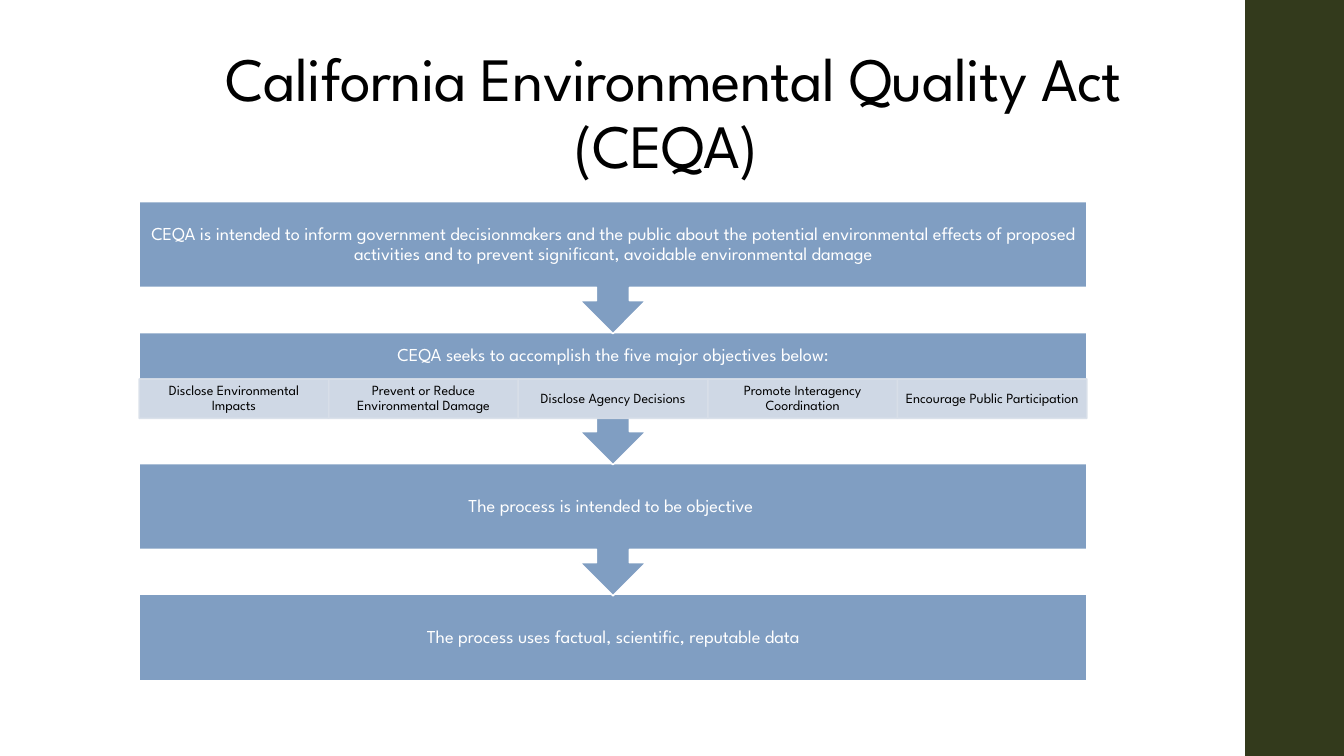
from dataclasses import dataclass

from lxml.etree import SubElement
from pptx import Presentation
from pptx.dml.color import RGBColor
from pptx.enum.shapes import MSO_SHAPE as Shape
from pptx.enum.text import MSO_ANCHOR as Anchor, PP_ALIGN as Align
from pptx.oxml.ns import qn
from pptx.util import Inches, Pt


@dataclass(frozen=True)
class Theme:
    font: str = "League Spartan"
    black: RGBColor = RGBColor(0x00, 0x00, 0x00)
    white: RGBColor = RGBColor(0xFF, 0xFF, 0xFF)
    olive: RGBColor = RGBColor(0x33, 0x3A, 0x1C)
    blue: RGBColor = RGBColor(0x80, 0x9E, 0xC2)
    pale: RGBColor = RGBColor(0xD8, 0xDF, 0xE9)
    title_size: float = 44
    step_size: float = 13
    objective_size: float = 10
    line_width: float = 1.1
    pale_opacity: int = 90


THEME = Theme()
STEPS = [
    "CEQA is intended to inform government decisionmakers and the public about "
    "the potential environmental effects of proposed activities and to prevent "
    "significant, avoidable environmental damage",
    "CEQA seeks to accomplish the five major objectives below:",
    "The process is intended to be objective ",
    "The process uses factual, scientific, reputable data",
]
OBJECTIVES_STEP = 1
OBJECTIVES = [
    "Disclose Environmental Impacts",
    "Prevent or Reduce Environmental Damage",
    "Disclose Agency Decisions",
    "Promote Interagency Coordination",
    "Encourage Public Participation",
]


def write(shape, text, size, color, insets, anchor=Anchor.MIDDLE):
    """Set centred text; insets are left/right, top and bottom in inches."""
    frame = shape.text_frame
    frame.word_wrap = True
    frame.vertical_anchor = anchor
    side, top, bottom = insets
    frame.margin_left = frame.margin_right = Inches(side)
    frame.margin_top, frame.margin_bottom = Inches(top), Inches(bottom)
    paragraph = frame.paragraphs[0]
    paragraph.text = text
    paragraph.alignment = Align.CENTER
    paragraph.line_spacing = 0.9
    font = paragraph.font
    font.name, font.size, font.color.rgb = THEME.font, Pt(size), color
    return paragraph


def add_block(slide, kind, box, fill, line=None):
    block = slide.shapes.add_shape(kind, *map(Inches, box))
    block.shadow.inherit = False
    block.fill.solid()
    block.fill.fore_color.rgb = fill
    if line is None:
        block.line.fill.background()
    else:
        block.line.color.rgb = line
        block.line.width = Pt(THEME.line_width)
    return block


def make_translucent(shape, percent):
    for color in shape.element.spPr.iter(qn("a:srgbClr")):
        SubElement(color, qn("a:alpha"), val=str(percent * 1000))


def add_title(slide, box):
    title = slide.shapes.add_textbox(*map(Inches, box))
    paragraph = write(title, "California Environmental Quality Act (CEQA) ",
                      THEME.title_size, THEME.black, (0.1, 0.05, 0.05),
                      Anchor.BOTTOM)
    paragraph.runs[0].font._element.set("spc", "-50")


def add_objectives(slide, box):
    left, top, width, height = box
    column = width / len(OBJECTIVES)
    for index, objective in enumerate(OBJECTIVES):
        cell = add_block(slide, Shape.RECTANGLE,
                         (left + index * column, top, column, height),
                         THEME.pale, THEME.pale)
        make_translucent(cell, THEME.pale_opacity)
        write(cell, objective, THEME.objective_size, THEME.black,
              (0.08, 0.01, 0.01))


def add_process(slide, box):
    """Stack the steps from the bottom up, so each arrow overlaps the next step."""
    left, top, width, height = box
    body, callout, header, strip = 0.85, 1.31, 0.46, 0.39
    pitch = (height - body) / (len(STEPS) - 1)
    last = len(STEPS) - 1
    for index in range(last, -1, -1):
        step_top = top + index * pitch
        kind, step_height = ((Shape.RECTANGLE, body) if index == last
                             else (Shape.DOWN_ARROW_CALLOUT, callout))
        step = add_block(slide, kind, (left, step_top, width, step_height),
                         THEME.blue, THEME.white)
        has_objectives = index == OBJECTIVES_STEP
        bottom = 0.1 + strip if has_objectives else 0.1
        write(step, STEPS[index], THEME.step_size, THEME.white,
              (0.1, 0.1, bottom))
        if has_objectives:
            add_objectives(slide, (left, step_top + header, width, strip))


def main():
    deck = Presentation()
    deck.slide_width, deck.slide_height = Inches(13.33), Inches(7.5)
    slide = deck.slides.add_slide(deck.slide_layouts[6])
    add_block(slide, Shape.RECTANGLE, (12.35, 0, 0.98, 7.5), THEME.olive)
    add_title(slide, (1.38, 0.4, 10.6, 1.45))
    add_process(slide, (1.38, 2, 9.4, 4.75))
    deck.save("out.pptx")


if __name__ == "__main__":
    main()
